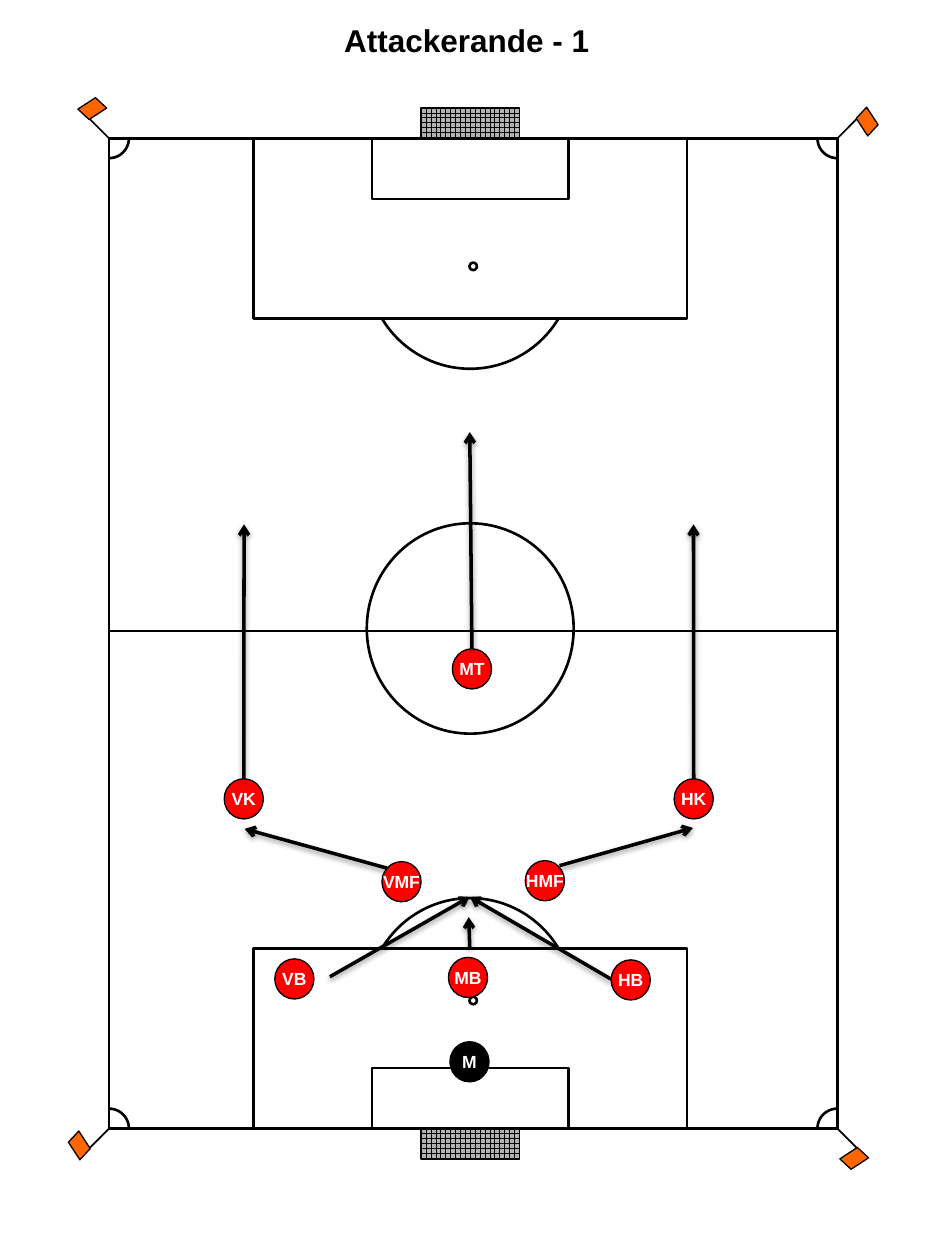
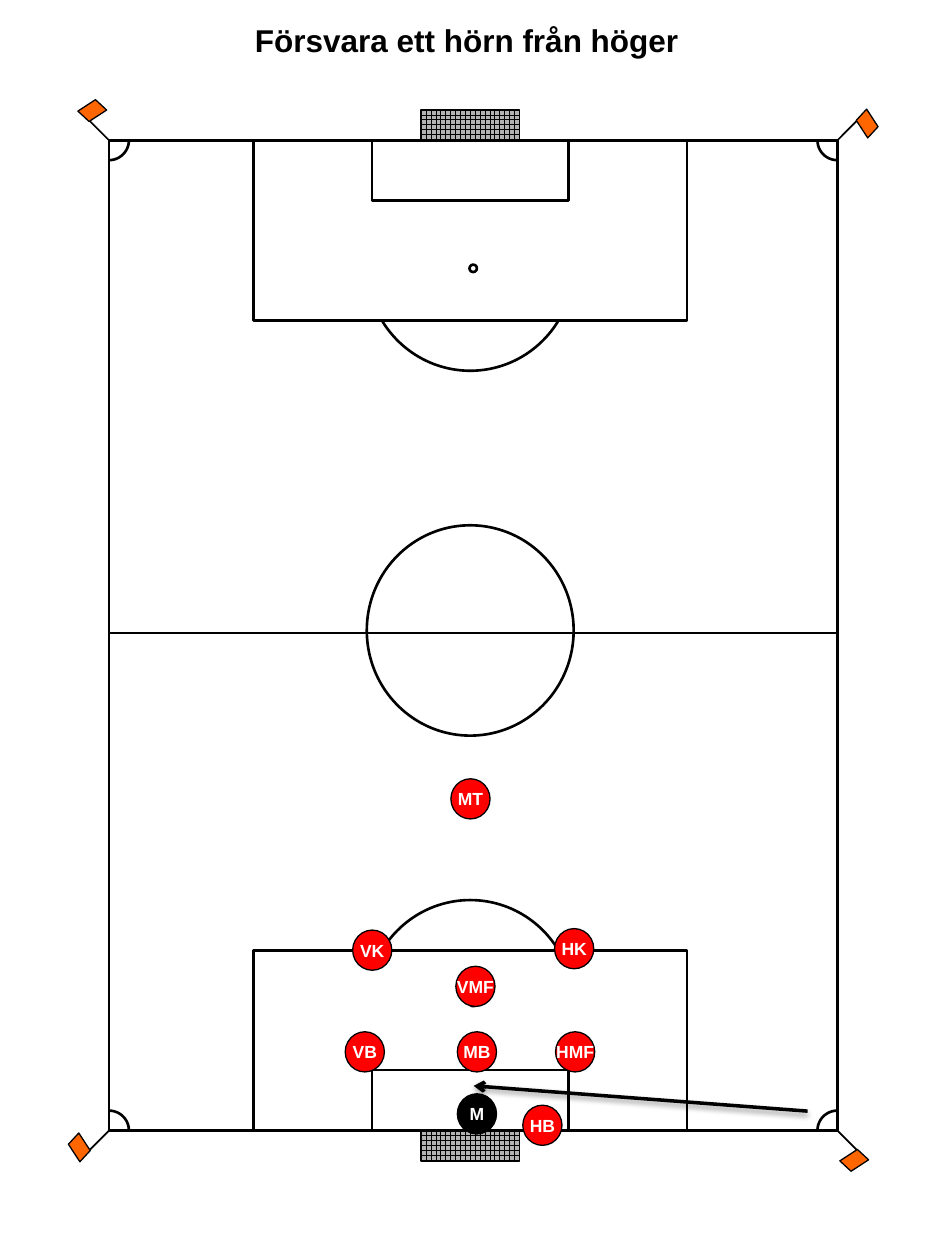
from lxml.etree import SubElement
from math import cos, pi, sin

from pptx import Presentation
from pptx.dml.color import RGBColor
from pptx.enum.dml import MSO_PATTERN
from pptx.enum.shapes import MSO_CONNECTOR, MSO_SHAPE
from pptx.enum.text import MSO_ANCHOR, MSO_AUTO_SIZE, PP_ALIGN
from pptx.oxml.ns import qn
from pptx.util import Cm, Pt

BLACK = RGBColor(0x00, 0x00, 0x00)
WHITE = RGBColor(0xFF, 0xFF, 0xFF)
RED = RGBColor(0xFF, 0x00, 0x00)
ORANGE = RGBColor(0xFF, 0x66, 0x00)
NET_GREY = RGBColor(0xB2, 0xB2, 0xB2)

FONT = "Arial"
MARKING, POLE, THIN, ARROW = 1.5, 1, 0.75, 2

# Lengths in centimetres
PITCH_LEFT, PITCH_WIDTH, PITCH_HEIGHT = 2.2, 14.68, 19.96
PITCH_MID = PITCH_LEFT + PITCH_WIDTH / 2
GOAL_MID = 9.48
TITLE_MID = 9.41
PLAYER_WIDTH, PLAYER_HEIGHT = 0.79, 0.81
CORNER_RADIUS = 0.4

SLIDES = [
    {
        "title": "Attackerande - 1",
        "title_width": 5.51,
        "pitch_top": 2.79,
        "players": {
            "M": (9.07, 21), "MT": (9.12, 13.08), "VB": (5.54, 19.33),
            "HB": (12.32, 19.35), "HMF": (10.59, 17.35), "VMF": (7.7, 17.37),
            "MB": (9.04, 19.3), "VK": (4.52, 15.7), "HK": (13.59, 15.7),
        },
        # A run starts at a player's top or at a point
        "runs": [
            ((11.28, 17.45), (13.97, 16.69)),
            ((7.8, 17.5), (4.93, 16.71)),
            ("HK", (13.98, 10.57)),
            ("VK", (4.92, 10.57)),
            ("MT", (9.47, 8.71)),
            ((6.65, 19.69), (9.47, 18.08)),
            ((12.32, 19.74), (9.47, 18.08)),
            ((9.47, 19.1), (9.45, 18.49)),
        ],
    },
    {
        "title": "Försvara ett hörn från höger",
        "title_width": 9.14,
        "pitch_top": 2.83,
        "players": {
            "M": (9.22, 22.05), "MT": (9.09, 15.7), "VB": (6.96, 20.8),
            "HB": (10.54, 22.28), "HMF": (11.2, 20.8), "VMF": (9.19, 19.48),
            "MB": (9.22, 20.8), "VK": (7.11, 18.75), "HK": (11.18, 18.72),
        },
        "runs": [((16.28, 22.4), (9.55, 21.89))],
    },
]


def turn(offset, quarters):
    """Turn an offset counter-clockwise by a number of quarters."""
    x, y = offset
    for _ in range(quarters):
        x, y = y, -x
    return x, y


class Board:
    """A tactics board: holds the style and the current slide."""

    def __init__(self):
        self.deck = Presentation()
        self.deck.slide_width, self.deck.slide_height = Cm(19.05), Cm(25.4)
        self.slide = None
        self.pitch = None

    def new_slide(self):
        self.slide = self.deck.slides.add_slide(self.deck.slide_layouts[6])
        self.pitch = self.slide.shapes.add_group_shape().shapes

    def outline(self, shape, width, fill=None):
        shape.shadow.inherit = False
        shape.line.color.rgb = BLACK
        shape.line.width = Pt(width)
        if fill is None:
            shape.fill.background()
        else:
            shape.fill.solid()
            shape.fill.fore_color.rgb = fill

    def marking(self, kind, centre, size, fill=None, width=MARKING, rotation=0):
        """Add a shape to the pitch, placed by its centre."""
        (x, y), (w, h) = centre, size
        shape = self.pitch.add_shape(kind, Cm(x - w / 2), Cm(y - h / 2), Cm(w), Cm(h))
        self.outline(shape, width, fill)
        shape.rotation = rotation
        return shape

    def line(self, shapes, start, end, width=MARKING):
        """Add a line and return it with its empty effect list."""
        line = shapes.add_connector(
            MSO_CONNECTOR.STRAIGHT, *(Cm(value) for value in (*start, *end)))
        line.line.color.rgb = BLACK
        line.line.width = Pt(width)
        effects = SubElement(line._element.spPr, qn("a:effectLst"))
        return line, effects

    def run_arrow(self, start, end):
        arrow, effects = self.line(self.slide.shapes, start, end, ARROW)
        SubElement(arrow.line._get_or_add_ln(), qn("a:tailEnd"), type="arrow")
        shadow = SubElement(effects, qn("a:outerShdw"), blurRad="40000",
                            dist="20000", dir="5400000", rotWithShape="0")
        colour = SubElement(shadow, qn("a:srgbClr"), val=str(BLACK))
        SubElement(colour, qn("a:alpha"), val="38000")
        return arrow

    def text(self, frame, words, size, colour):
        frame.word_wrap = False
        frame.text = words
        paragraph = frame.paragraphs[0]
        paragraph.alignment = PP_ALIGN.CENTER
        font = paragraph.runs[0].font
        font.name, font.size, font.bold = FONT, Pt(size), True
        font.color.rgb = colour

    def title(self, words, width):
        box = self.slide.shapes.add_textbox(
            Cm(TITLE_MID - width / 2), Cm(0.3), Cm(width), Cm(1.02))
        self.text(box.text_frame, words, 18, BLACK)
        box.text_frame.auto_size = MSO_AUTO_SIZE.SHAPE_TO_FIT_TEXT

    def player(self, role, left, top):
        player = self.slide.shapes.add_shape(
            MSO_SHAPE.OVAL, Cm(left), Cm(top), Cm(PLAYER_WIDTH), Cm(PLAYER_HEIGHT))
        self.outline(player, THIN, BLACK if role == "M" else RED)
        player.text_frame.vertical_anchor = MSO_ANCHOR.MIDDLE
        self.text(player.text_frame, role, 10, WHITE)
        return player

    def corner(self, x, y, quarters):
        """Add arc, pole and flag; quarters counts from the bottom left corner."""
        def at(offset):
            dx, dy = turn(offset, quarters)
            return x + dx, y + dy

        steps = 12
        angles = [pi / 2 * step / steps for step in range(steps + 1)]
        points = [at((CORNER_RADIUS * sin(a), -CORNER_RADIUS * cos(a))) for a in angles]
        points = [(Cm(px), Cm(py)) for px, py in points]
        builder = self.pitch.build_freeform(*points[0])
        builder.add_line_segments(points[1:], close=False)
        self.outline(builder.convert_to_shape(), MARKING)

        self.line(self.pitch, (x, y), at((-0.4, 0.4)), POLE)
        self.marking(MSO_SHAPE.PARALLELOGRAM, at((-0.6, 0.34)), (0.41, 0.41),
                     ORANGE, THIN, 312.8 - 90 * quarters)

    def pitch_end(self, goal_line, inward):
        """Add goal and penalty area; inward is 1 for down and -1 for up."""
        def at(distance, x=GOAL_MID):
            return x, goal_line + inward * distance

        net = self.marking(MSO_SHAPE.RECTANGLE, at(-0.31), (0.61, 1.98),
                           width=THIN, rotation=270)
        net.fill.patterned()
        net.fill.pattern = MSO_PATTERN.LARGE_GRID
        net.fill.fore_color.rgb = BLACK
        net.fill.back_color.rgb = NET_GREY

        self.marking(MSO_SHAPE.OVAL, at(2.53), (4.17, 4.23), WHITE)
        self.line(self.pitch, at(3.63, 7.75), at(3.63, 11.33))
        for depth, width in ((3.63, 8.74), (1.22, 3.96)):
            self.marking(MSO_SHAPE.RECTANGLE, at(depth / 2), (width, depth), WHITE)
        self.marking(MSO_SHAPE.OVAL, at(2.58, PITCH_MID), (0.15, 0.15), WHITE)

    def draw_pitch(self, top):
        right, bottom = PITCH_LEFT + PITCH_WIDTH, top + PITCH_HEIGHT
        self.marking(MSO_SHAPE.RECTANGLE, (PITCH_MID, top + PITCH_HEIGHT / 2),
                     (PITCH_WIDTH, PITCH_HEIGHT))
        self.marking(MSO_SHAPE.OVAL, (GOAL_MID, top + 9.88), (4.17, 4.24))
        self.line(self.pitch, (PITCH_LEFT, top + 9.93), (right, top + 9.93))
        corners = [(PITCH_LEFT, bottom), (right, bottom), (right, top), (PITCH_LEFT, top)]
        for quarters, (x, y) in enumerate(corners):
            self.corner(x, y, quarters)
        self.pitch_end(bottom, -1)
        self.pitch_end(top, 1)

    def draw_slide(self, title, title_width, pitch_top, players, runs):
        self.new_slide()
        self.draw_pitch(pitch_top)
        self.title(title, title_width)
        team = {role: self.player(role, *place) for role, place in players.items()}
        for start, end in runs:
            if start in team:
                self.run_arrow(players[start], end).begin_connect(team[start], 0)
            else:
                self.run_arrow(start, end)


def main():
    board = Board()
    for content in SLIDES:
        board.draw_slide(**content)
    board.deck.save("out.pptx")


if __name__ == "__main__":
    main()
